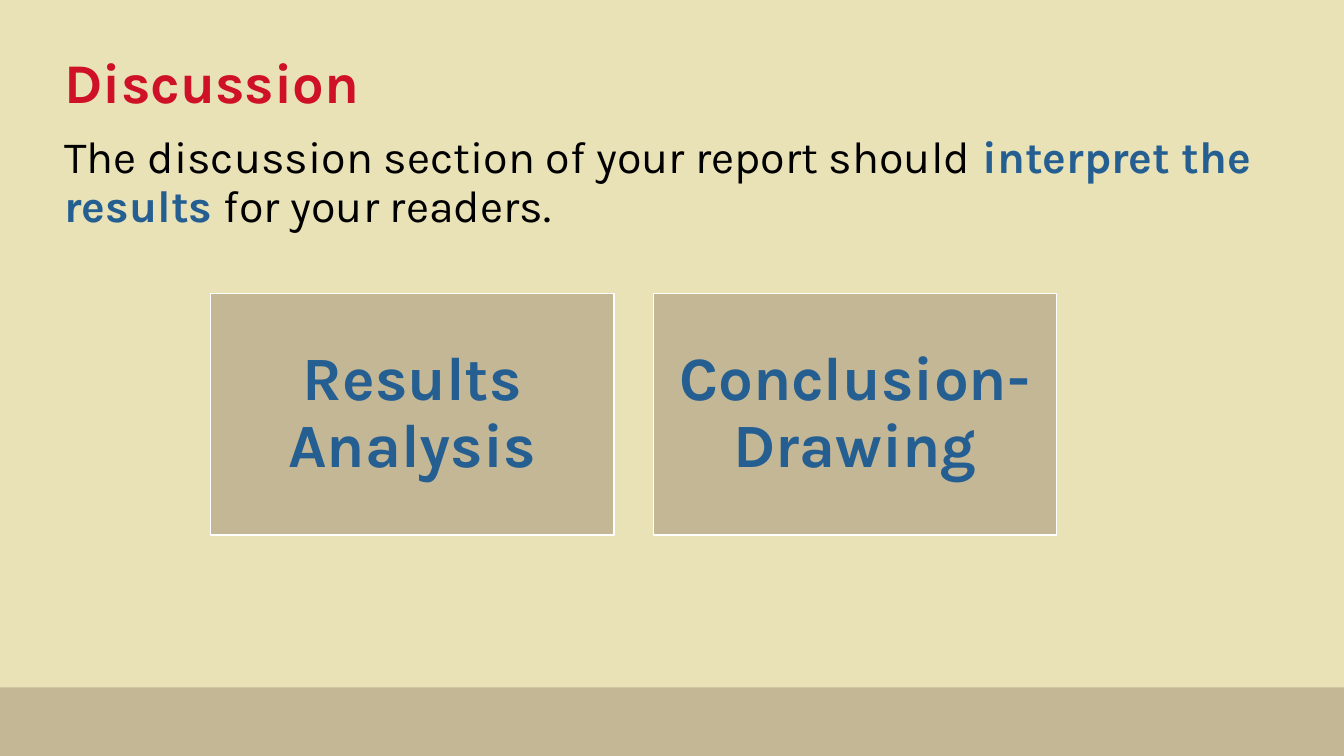
"""Build the Discussion slide with its two topic cards."""
from dataclasses import dataclass

from pptx import Presentation
from pptx.dml.color import RGBColor
from pptx.enum.shapes import MSO_SHAPE
from pptx.enum.text import MSO_ANCHOR, PP_ALIGN
from pptx.shapes.autoshape import Shape
from pptx.slide import Slide
from pptx.util import Inches, Pt

CREAM = RGBColor(0xEA, 0xE2, 0xB7)
TAN = RGBColor(0xC4, 0xB7, 0x96)
RED = RGBColor(0xCE, 0x11, 0x26)
BLUE = RGBColor(0x25, 0x5F, 0x91)
BLACK = RGBColor(0, 0, 0)
WHITE = RGBColor(255, 255, 255)

PAGE_WIDTH, PAGE_HEIGHT = 13.33, 7.5
FOOTER_TOP = 6.82
CARD_LEFT, CARD_TOP, CARD_WIDTH, CARD_HEIGHT = 2.09, 2.91, 4, 2.4
CARD_STEP = 4.39


@dataclass(frozen=True)
class Area:
    """Position and size in inches."""
    left: float
    top: float
    width: float
    height: float

    def lengths(self) -> list[Inches]:
        return [Inches(value) for value in (self.left, self.top, self.width, self.height)]


@dataclass(frozen=True)
class Span:
    """A stretch of text in one colour and weight."""
    text: str
    color: RGBColor
    bold: bool = True


def write(box: Shape, spans: list[Span], size: int, frame_format: dict, para_format: dict) -> None:
    frame = box.text_frame
    para = frame.paragraphs[0]
    for target, values in (
        (frame, {"word_wrap": True, **frame_format}),
        (para, {"line_spacing": 0.9, **para_format}),
    ):
        for name, value in values.items():
            setattr(target, name, value)
    for span in spans:
        run = para.add_run()
        run.text = span.text
        for name, value in {"name": "Karla", "size": Pt(size), "bold": span.bold}.items():
            setattr(run.font, name, value)
        run.font.color.rgb = span.color


def add_block(page: Slide, area: Area) -> Shape:
    block = page.shapes.add_shape(MSO_SHAPE.RECTANGLE, *area.lengths())
    block.shadow.inherit = False
    block.fill.solid()
    block.fill.fore_color.rgb = TAN
    block.line.fill.background()
    return block


def add_card(page: Slide, area: Area, label: str) -> None:
    card = add_block(page, area)
    card.line.color.rgb = WHITE
    card.line.width = Pt(1)
    margins = {f"margin_{side}": Inches(0.18) for side in ("left", "top", "right", "bottom")}
    write(card, [Span(label, BLUE)], 44,
          {"vertical_anchor": MSO_ANCHOR.MIDDLE, **margins}, {"alignment": PP_ALIGN.CENTER})


def main() -> None:
    deck = Presentation()
    deck.slide_width, deck.slide_height = Inches(PAGE_WIDTH), Inches(PAGE_HEIGHT)
    page = deck.slides.add_slide(deck.slide_layouts[6])
    page.background.fill.solid()
    page.background.fill.fore_color.rgb = CREAM

    add_block(page, Area(0, FOOTER_TOP, PAGE_WIDTH, PAGE_HEIGHT - FOOTER_TOP))

    title = page.shapes.add_textbox(*Area(0.54, 0.18, 12.28, 1.33).lengths())
    write(title, [Span("Discussion", RED)], 40, {"vertical_anchor": MSO_ANCHOR.MIDDLE}, {})

    body = page.shapes.add_textbox(*Area(0.54, 1.29, 12.28, 5.11).lengths())
    write(body, [
        Span("The discussion section of your report should ", BLACK, False),
        Span("interpret the results ", BLUE),
        Span("for your readers.", BLACK, False),
    ], 32, {"vertical_anchor": MSO_ANCHOR.TOP}, {"space_after": Pt(12)})

    for index, label in enumerate(("Results Analysis", "Conclusion-Drawing")):
        left = CARD_LEFT + index * CARD_STEP
        add_card(page, Area(left, CARD_TOP, CARD_WIDTH, CARD_HEIGHT), label)

    deck.save("out.pptx")


if __name__ == "__main__":
    main()
